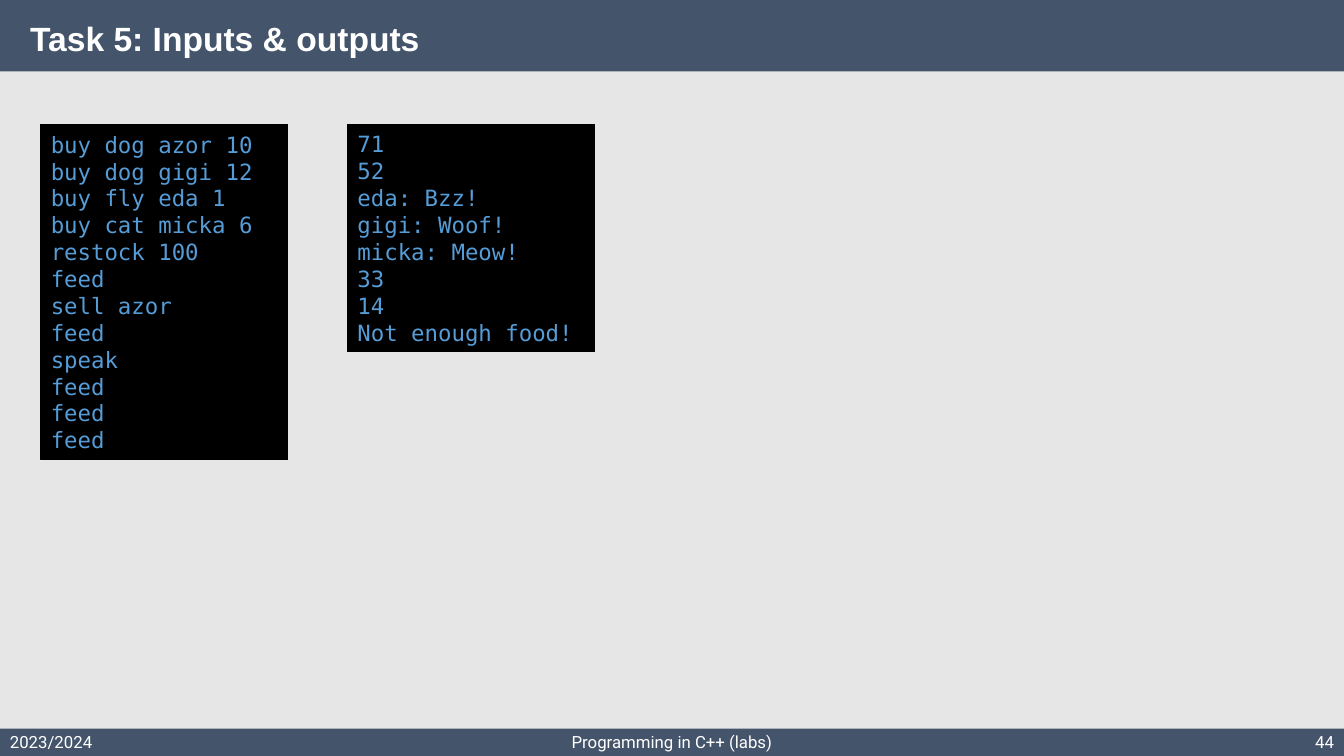
from dataclasses import dataclass

from pptx import Presentation
from pptx.dml.color import RGBColor
from pptx.enum.shapes import MSO_SHAPE as Shape
from pptx.enum.text import MSO_ANCHOR as Anchor, MSO_AUTO_SIZE as AutoSize, PP_ALIGN as Align
from pptx.util import Cm, Pt

SLIDE_W, SLIDE_H = 33.87, 19.05
TITLE_H, FOOTER_H = 1.8, 0.69
NAVY, WHITE, BLACK, GREY, CODE_BLUE = "44546A", "FFFFFF", "000000", "E7E6E6", "569CD6"
LINE_H, CONSOLE_PAD = 0.68, 0.3


@dataclass
class Console:
    left: float
    lines: list[str]


@dataclass
class FooterItem:
    left: float
    width: float
    text: str
    align: Align


CONSOLES = [
    Console(1.03, [
        "buy dog azor 10", "buy dog gigi 12", "buy fly eda 1", "buy cat micka 6",
        "restock 100", "feed", "sell azor", "feed", "speak", "feed", "feed", "feed",
    ]),
    Console(8.76, [
        "71", "52", "eda: Bzz!", "gigi: Woof!", "micka: Meow!", "33", "14",
        "Not enough food!",
    ]),
]
FOOTER = [
    FooterItem(0, 7.62, "2023/2024", Align.LEFT),
    FooterItem(11.22, 11.43, "Programming in C++ (labs)", Align.CENTER),
    FooterItem(SLIDE_W - 7.62, 7.62, "44", Align.RIGHT),
]


def color(hex_code: str) -> RGBColor:
    return RGBColor.from_string(hex_code)


def write(tf, lines: list[str], *, font: str, size: float, fill: str, bold: bool = False,
          align: Align = Align.LEFT, anchor: Anchor = Anchor.MIDDLE,
          spacing: float = 1.0) -> None:
    tf.word_wrap = True
    tf.vertical_anchor = anchor
    for i, line in enumerate(lines):
        p = tf.add_paragraph() if i else tf.paragraphs[0]
        p.alignment = align
        p.line_spacing = spacing
        r = p.add_run()
        r.text = line
        r.font.name, r.font.size, r.font.bold = font, Pt(size), bold
        r.font.color.rgb = color(fill)


def add_rect(s, left: float, top: float, width: float, height: float, fill: str,
             line: str | None = None):
    sp = s.shapes.add_shape(Shape.RECTANGLE, Cm(left), Cm(top), Cm(width), Cm(height))
    sp.shadow.inherit = False
    sp.fill.solid()
    sp.fill.fore_color.rgb = color(fill)
    if line:
        sp.line.color.rgb = color(line)
        sp.line.width = Pt(0.75)
    else:
        sp.line.fill.background()
    return sp


def add_console(s, console: Console) -> None:
    height = LINE_H * len(console.lines) + CONSOLE_PAD
    sp = add_rect(s, console.left, 3.13, 6.22, height, BLACK, BLACK)
    write(sp.text_frame, console.lines, font="DejaVu Sans Mono", size=16, fill=CODE_BLUE)
    sp.text_frame.auto_size = AutoSize.SHAPE_TO_FIT_TEXT


def add_footer_item(s, item: FooterItem) -> None:
    sp = s.shapes.add_textbox(Cm(item.left), Cm(SLIDE_H - FOOTER_H), Cm(item.width), Cm(FOOTER_H))
    write(sp.text_frame, [item.text], font="Roboto", size=12, fill=WHITE, align=item.align)


def main() -> None:
    prs = Presentation()
    prs.slide_width, prs.slide_height = Cm(SLIDE_W), Cm(SLIDE_H)
    s = prs.slides.add_slide(prs.slide_layouts[6])
    s.background.fill.solid()
    s.background.fill.fore_color.rgb = color(GREY)

    # Title bar
    title = add_rect(s, 0, 0, SLIDE_W, TITLE_H, NAVY)
    tf = title.text_frame
    tf.margin_left, tf.margin_top = Cm(0.76), Cm(0.57)
    write(tf, ["Task 5: Inputs & outputs"], font="Arial", size=24, fill=WHITE,
          bold=True, anchor=Anchor.TOP, spacing=0.9)

    # Footer bar
    add_rect(s, 0, SLIDE_H - FOOTER_H, SLIDE_W, FOOTER_H, NAVY)
    for item in FOOTER:
        add_footer_item(s, item)

    # Input and output consoles
    for console in CONSOLES:
        add_console(s, console)

    prs.save("out.pptx")


if __name__ == "__main__":
    main()
